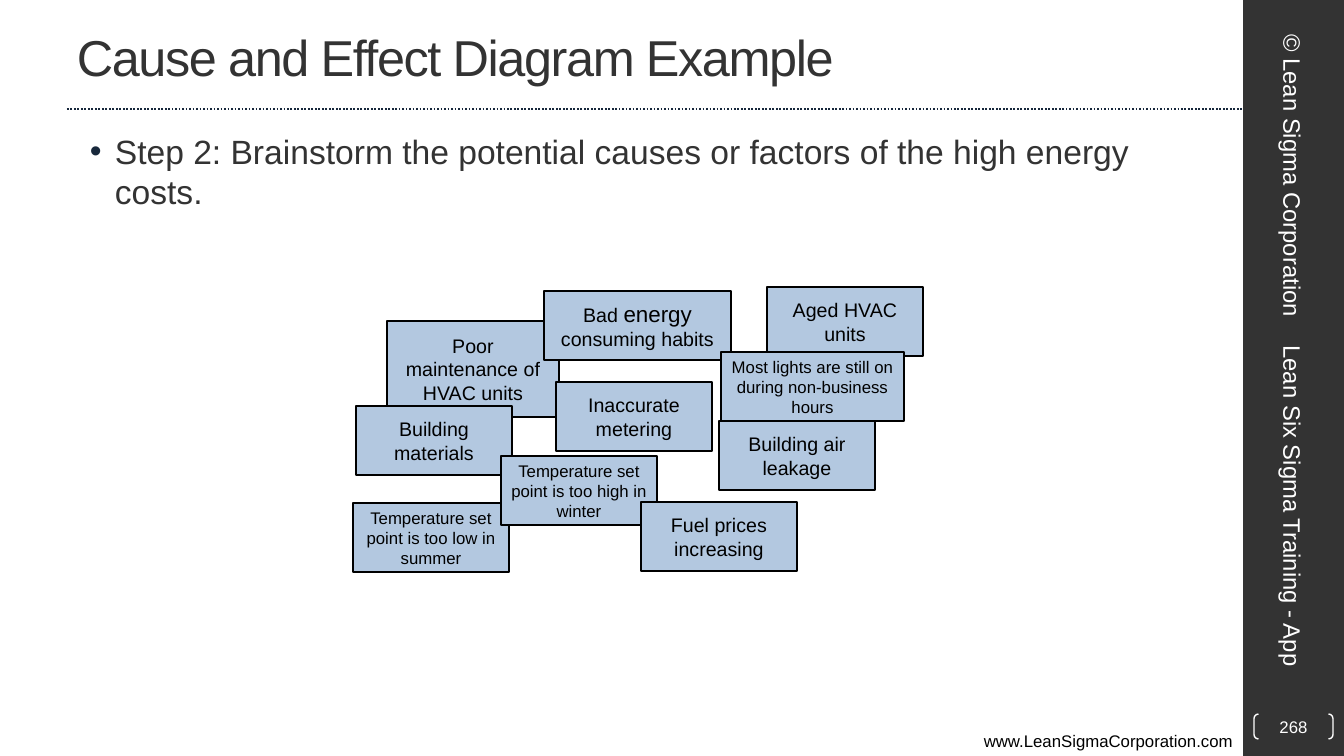
from lxml.etree import SubElement
from pptx import Presentation
from pptx.dml.color import RGBColor
from pptx.enum.dml import MSO_LINE
from pptx.enum.shapes import MSO_CONNECTOR, MSO_SHAPE
from pptx.enum.text import MSO_ANCHOR, PP_ALIGN
from pptx.oxml.ns import qn
from pptx.util import Pt

PX = 914400 / 100.8
FONT = "Arial"
COLORS = {
    "dark": "333333",
    "rule": "17273B",
    "bullet": "18283B",
    "note": "B3C8E0",
    "black": "000000",
    "white": "FFFFFF",
}
NOTE_WIDTH, NOTE_HEIGHT = 156, 69

# Left, top, width, height, size, spans (back to front)
CAUSES = [
    (767, 287, NOTE_WIDTH, NOTE_HEIGHT, 14, ["Aged HVAC units"]),
    (387, 321, 172, 96, 14, ["Poor maintenance of HVAC units"]),
    (544, 291, 187, NOTE_HEIGHT, 14, ["Bad ", "energy", " consuming habits"]),
    (556, 382, NOTE_WIDTH, NOTE_HEIGHT, 14, ["Inaccurate metering"]),
    (356, 406, NOTE_WIDTH, NOTE_HEIGHT, 14, ["Building materials"]),
    (353, 503, NOTE_WIDTH, NOTE_HEIGHT, 12, ["Temperature set point is too low in summer"]),
    (501, 456, NOTE_WIDTH, NOTE_HEIGHT, 12, ["Temperature set point is too high in winter"]),
    (721, 352, 183, NOTE_HEIGHT, 12, ["Most lights are still on during non-business hours"]),
    (719, 421, NOTE_WIDTH, NOTE_HEIGHT, 14, ["Building air leakage"]),
    (641, 502, NOTE_WIDTH, NOTE_HEIGHT, 14, ["Fuel prices increasing"]),
]


def px(value):
    return round(value * PX)


def rgb(name):
    return RGBColor.from_string(COLORS[name])


def write(shape, spans, size, color, align=PP_ALIGN.LEFT, anchor=MSO_ANCHOR.MIDDLE):
    frame = shape.text_frame
    frame.word_wrap = True
    frame.vertical_anchor = anchor
    para = frame.paragraphs[0]
    para.alignment = align
    for text in spans:
        span = para.add_run()
        span.text = text
        span.font.name = FONT
        span.font.size = Pt(size)
        span.font.color.rgb = rgb(color)
    return para


def add_text(page, bounds, text, size, color, rotation=0, **layout):
    box = page.shapes.add_textbox(*map(px, bounds))
    box.rotation = rotation
    return write(box, [text], size, color, **layout)


def add_box(shapes, kind, bounds, fill=None, line=None):
    box = shapes.add_shape(kind, *map(px, bounds))
    box.shadow.inherit = False
    if fill:
        box.fill.solid()
        box.fill.fore_color.rgb = rgb(fill)
    else:
        box.fill.background()
    if line:
        box.line.color.rgb = rgb(line)
        box.line.width = Pt(1)
    else:
        box.line.fill.background()
    return box


def add_rule(page, left, right, top):
    rule = page.shapes.add_connector(
        MSO_CONNECTOR.STRAIGHT, px(left), px(top), px(right), px(top))
    rule.line.color.rgb = rgb("rule")
    rule.line.width = Pt(1.25)
    rule.line.dash_style = MSO_LINE.ROUND_DOT
    SubElement(rule._element.spPr, qn("a:effectLst"))


def add_bullet(para, margin, hanging):
    properties = para._p.get_or_add_pPr()
    properties.set("marL", str(px(margin)))
    properties.set("indent", str(-px(hanging)))
    color = SubElement(properties, qn("a:buClr"))
    SubElement(color, qn("a:srgbClr"), val=COLORS["bullet"])
    SubElement(properties, qn("a:buFont"), typeface=FONT)
    SubElement(properties, qn("a:buChar"), char="•")


def add_cause(group, left, top, width, height, size, spans):
    note = add_box(group.shapes, MSO_SHAPE.RECTANGLE,
                   (left, top, width, height), "note", "black")
    para = write(note, spans, size, "black", PP_ALIGN.CENTER)
    for span in para.runs:
        if span.text == "energy":
            span.font.size = Pt(16)


def add_page_number(page, number):
    badge = add_box(page.shapes, MSO_SHAPE.DOUBLE_BRACKET,
                    (1254, 714, 79, 25), line="white")
    badge.adjustments[0] = 0.18
    frame = badge.text_frame
    frame.margin_left = frame.margin_right = 0
    frame.margin_top = frame.margin_bottom = 0
    write(badge, [number], 12, "white", PP_ALIGN.CENTER)


def main():
    deck = Presentation()
    deck.slide_width, deck.slide_height = px(1344), px(756)
    page = deck.slides.add_slide(deck.slide_layouts[6])

    # Side band, rule and footer
    add_box(page.shapes, MSO_SHAPE.RECTANGLE, (1243, 0, 101, 756), "dark")
    add_rule(page, 67, 1243, 109)
    add_text(page, (0, 726, 1243, 30), "www.LeanSigmaCorporation.com", 12, "black",
             align=PP_ALIGN.RIGHT, anchor=MSO_ANCHOR.TOP)

    # Title and step
    title = add_text(page, (67, 3, 1120, 106), "Cause and Effect Diagram Example",
                     36, "dark")
    title.runs[0].font._element.set("spc", "-100")
    step = add_text(
        page, (67, 126, 1120, 605),
        "Step 2: Brainstorm the potential causes or factors of the high energy costs.",
        24, "dark", anchor=MSO_ANCHOR.TOP)
    add_bullet(step, 38, 25)

    # Side band text
    add_page_number(page, "268")
    add_text(page, (1133, 149, 320, 53), "© Lean Sigma Corporation", 17, "white",
             rotation=90, align=PP_ALIGN.CENTER)
    add_text(page, (1108, 494, 370, 53), "Lean Six Sigma Training - App", 17, "white",
             rotation=90)

    # Brainstormed causes
    group = page.shapes.add_group_shape()
    for cause in CAUSES:
        add_cause(group, *cause)

    deck.save("out.pptx")


if __name__ == "__main__":
    main()
